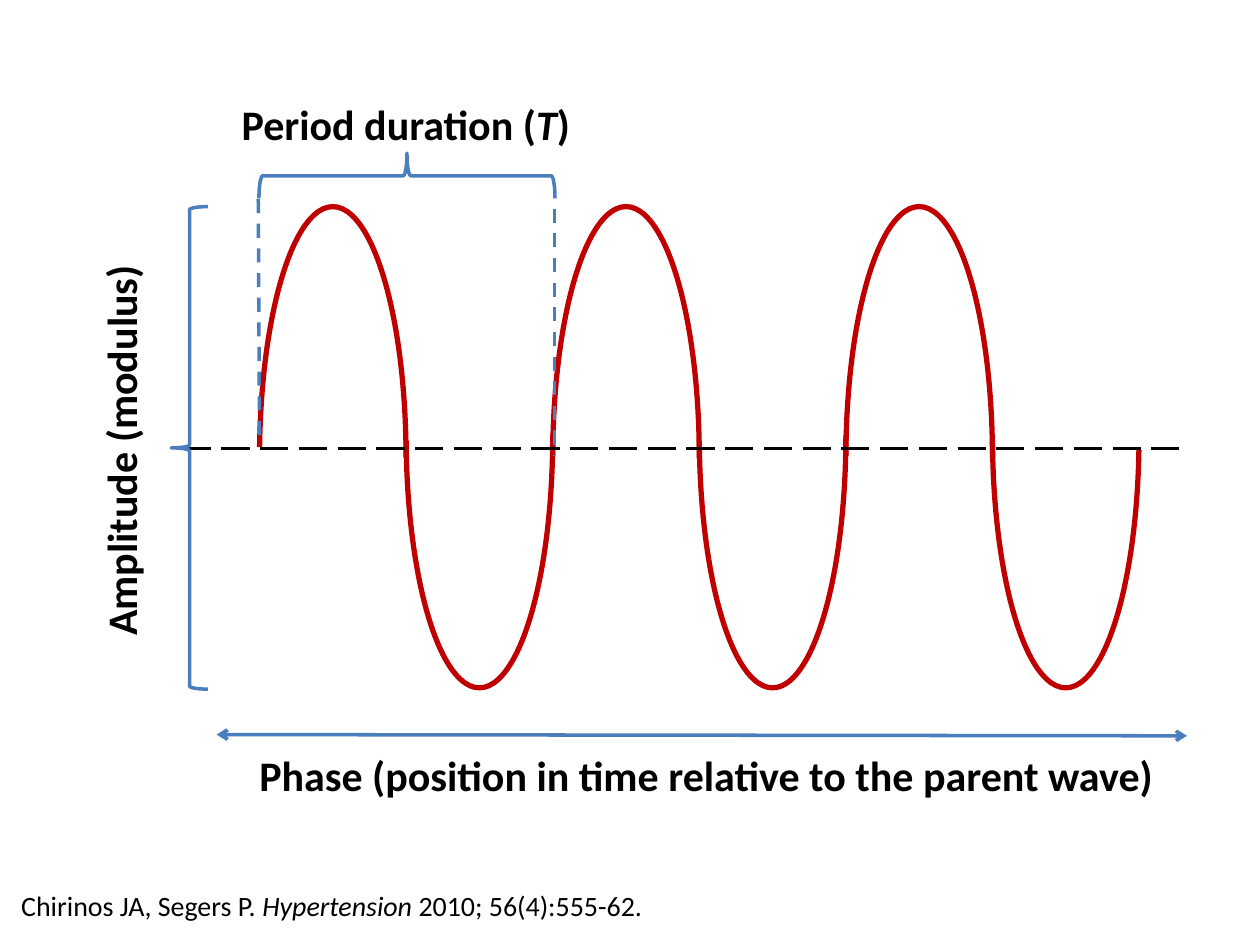
from dataclasses import dataclass

from lxml import etree
from pptx import Presentation
from pptx.dml.color import RGBColor
from pptx.enum.dml import MSO_LINE
from pptx.enum.shapes import MSO_CONNECTOR, MSO_SHAPE
from pptx.enum.text import MSO_AUTO_SIZE
from pptx.oxml.ns import qn
from pptx.util import Inches, Pt

ARC = MSO_SHAPE.ARC
BRACE = MSO_SHAPE.RIGHT_BRACE
STRAIGHT = MSO_CONNECTOR.STRAIGHT
DASH = MSO_LINE.DASH
LONG_DASH = MSO_LINE.LONG_DASH
FIT_SHAPE = MSO_AUTO_SIZE.SHAPE_TO_FIT_TEXT
BLANK_LAYOUT = 6


@dataclass(frozen=True)
class Theme:
    font: str = "Calibri"
    text: RGBColor = RGBColor(0x00, 0x00, 0x00)
    wave: RGBColor = RGBColor(0xC0, 0x00, 0x00)
    marker: RGBColor = RGBColor(0x4B, 0x7E, 0xBC)
    label_size: int = 24
    citation_size: int = 16
    wave_width: int = 3
    marker_width: int = 2


@dataclass(frozen=True)
class Label:
    phrases: tuple[str, ...]  # every second phrase is italic
    box: tuple[float, float, float, float]
    size: int
    bold: bool = True
    wrap: bool = False
    rotation: int = 0


@dataclass(frozen=True)
class Rule:
    start: tuple[float, float]
    end: tuple[float, float]
    color: RGBColor
    dash: MSO_LINE | None = None
    arrows: bool = False


@dataclass(frozen=True)
class Brace:
    box: tuple[float, float, float, float]
    rotation: int = 0


THEME = Theme()

WAVE_LEFT, WAVE_RIGHT = 2.06, 9.04
HALF_WAVES = 6
ARC_HEIGHT = 4
CREST_TOP, TROUGH_TOP = 1.64, 1.46
# Start and end angles, in the units of the adjustment handles
FIRST_CREST, CREST = (113.33, 215.51), (109.31, 215.51)
TROUGH, LAST_TROUGH = (110.25, 0.58), (110.25, 209.43)

PERIOD_LABEL = Label(("Period duration (", "T", ")"), (1.82, 0.73, 2.83, 0.91),
                     THEME.label_size, wrap=True)
AMPLITUDE_LABEL = Label(("Amplitude (modulus)",), (-0.63, 3.31, 3.17, 0.5),
                        THEME.label_size, rotation=270)
PHASE_LABEL = Label(("Phase (position in time relative to the parent wave)",),
                    (1.96, 5.9, 7.38, 0.5), THEME.label_size)
CITATION = Label(("Chirinos JA, Segers P. ", "Hypertension", " 2010; 56(4):555-62."),
                 (0.07, 7, 6.92, 0.35), THEME.citation_size, bold=False, wrap=True)

PERIOD_BRACE = Brace((3.05, 0.22, 0.36, 2.35), rotation=90)
AMPLITUDE_BRACE = Brace((1.36, 1.64, 0.29, 3.83))

PERIOD_START = Rule((2.05, 1.58), (2.06, 3.49), THEME.marker, DASH)
PERIOD_END = Rule((4.4, 1.46), (4.4, 3.62), THEME.marker, DASH)
BASELINE = Rule((1.45, 3.56), (9.4, 3.56), THEME.text, LONG_DASH)
PHASE_AXIS = Rule((1.72, 5.83), (9.42, 5.84), THEME.marker, arrows=True)


def add_outline(shapes, preset, box: tuple, color: RGBColor, width: int, flip: str = ""):
    """Add an unfilled preset shape; flip is "", "flipH" or "flipV"."""
    outline = shapes.add_shape(preset, *map(Inches, box))
    outline.shadow.inherit = False
    outline.fill.background()
    outline.line.color.rgb = color
    outline.line.width = Pt(width)
    if flip:
        outline.element.spPr.get_or_add_xfrm().set(flip, "1")
    return outline


def add_wave(slide) -> None:
    wave = slide.shapes.add_group_shape()
    half_period = (WAVE_RIGHT - WAVE_LEFT) / HALF_WAVES
    for index in range(HALF_WAVES):
        is_trough = index % 2 == 1
        if is_trough:
            angles = LAST_TROUGH if index == HALF_WAVES - 1 else TROUGH
        else:
            angles = FIRST_CREST if index == 0 else CREST
        top = TROUGH_TOP if is_trough else CREST_TOP
        box = (WAVE_LEFT + index * half_period, top, half_period, ARC_HEIGHT)
        arc = add_outline(wave.shapes, ARC, box, THEME.wave, THEME.wave_width,
                          "flipV" if is_trough else "")
        arc.adjustments[0], arc.adjustments[1] = angles


def add_brace(slide, brace: Brace) -> None:
    shape = add_outline(slide.shapes, BRACE, brace.box, THEME.marker,
                        THEME.marker_width, "flipH")
    shape.rotation = brace.rotation


def add_rule(slide, rule: Rule) -> None:
    connector = slide.shapes.add_connector(STRAIGHT, *map(Inches, rule.start + rule.end))
    connector.line.color.rgb = rule.color
    connector.line.width = Pt(THEME.marker_width)
    if rule.dash is not None:
        connector.line.dash_style = rule.dash
    if rule.arrows:
        line_xml = connector.element.spPr.find(qn("a:ln"))
        for end in ("a:headEnd", "a:tailEnd"):
            etree.SubElement(line_xml, qn(end), type="arrow")
    etree.SubElement(connector.element.spPr, qn("a:effectLst"))


def add_label(slide, label: Label) -> None:
    box = slide.shapes.add_textbox(*map(Inches, label.box))
    box.rotation = label.rotation
    frame = box.text_frame
    frame.word_wrap = label.wrap
    frame.auto_size = FIT_SHAPE
    paragraph = frame.paragraphs[0]
    for index, phrase in enumerate(label.phrases):
        run = paragraph.add_run()
        run.text = phrase
        run.font.name = THEME.font
        run.font.size = Pt(label.size)
        run.font.bold = label.bold
        run.font.italic = index % 2 == 1
        run.font.color.rgb = THEME.text


def main() -> None:
    presentation = Presentation()
    presentation.slide_width = Inches(10)
    presentation.slide_height = Inches(7.5)
    slide = presentation.slides.add_slide(presentation.slide_layouts[BLANK_LAYOUT])

    add_label(slide, PERIOD_LABEL)
    add_wave(slide)
    add_brace(slide, PERIOD_BRACE)
    for rule in (PERIOD_START, PERIOD_END, BASELINE):
        add_rule(slide, rule)
    add_label(slide, AMPLITUDE_LABEL)
    add_brace(slide, AMPLITUDE_BRACE)
    add_rule(slide, PHASE_AXIS)
    add_label(slide, PHASE_LABEL)
    add_label(slide, CITATION)

    presentation.save("out.pptx")


if __name__ == "__main__":
    main()
